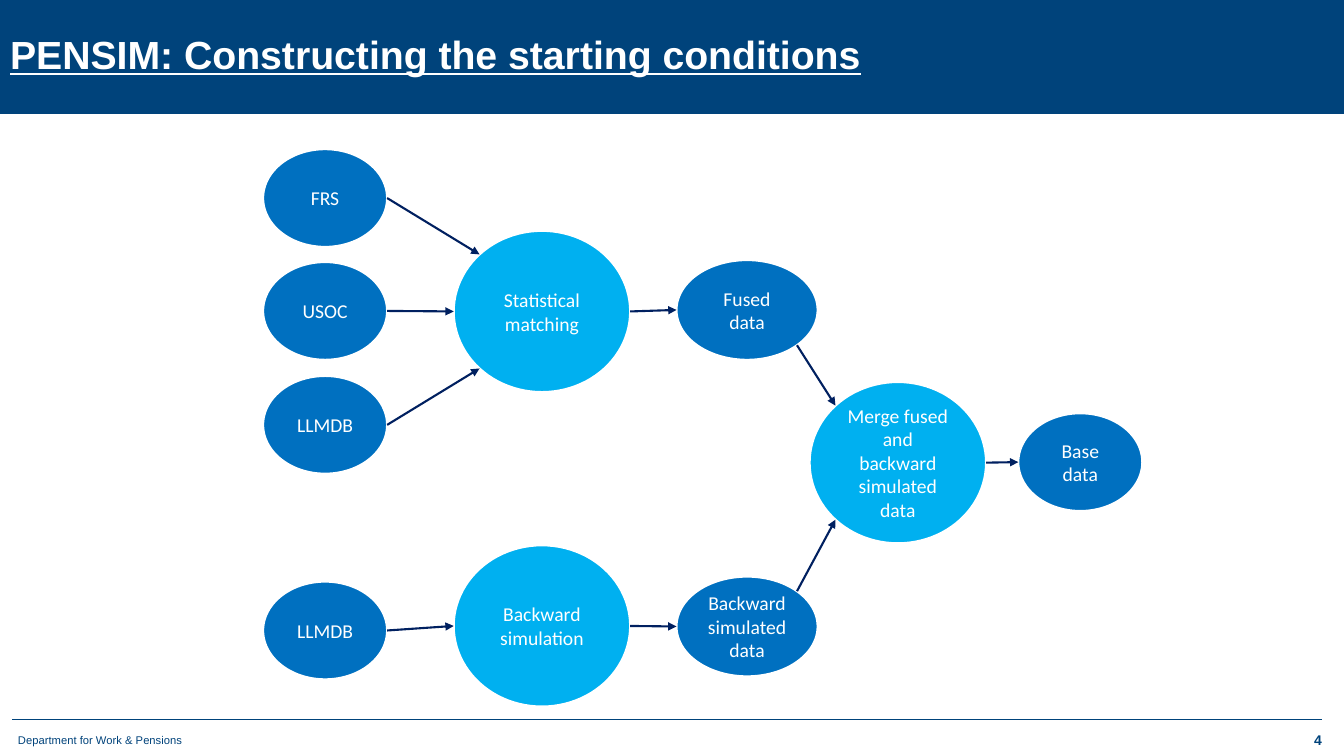
from math import cos, radians, sin

from lxml.etree import SubElement
from pptx import Presentation
from pptx.dml.color import RGBColor
from pptx.enum.shapes import MSO_CONNECTOR, MSO_SHAPE
from pptx.enum.text import MSO_ANCHOR, PP_ALIGN
from pptx.oxml.ns import qn
from pptx.util import Inches, Pt

COLORS = {
    "navy": "00437B",
    "data": "0070C0",
    "process": "00B0F0",
    "arrow": "002060",
    "white": "FFFFFF",
}
SMALL, MEDIUM, LARGE = (1.23, 0.97), (1.4, 0.99), (1.75, 1.6)
NODES = {
    "frs": ("FRS", "data", 2.61, 1.48, SMALL),
    "usoc": ("USOC", "data", 2.61, 2.6, SMALL),
    "llmdb": ("LLMDB", "data", 2.61, 3.73, SMALL),
    "matching": ("Statistical matching", "process", 4.5, 2.29, LARGE),
    "fused": ("Fused data", "data", 6.71, 2.58, MEDIUM),
    "merge": ("Merge fused and backward simulated data", "process", 8.03, 3.79, LARGE),
    "simulation": ("Backward simulation", "process", 4.5, 5.41, LARGE),
    "simulated": ("Backward simulated data", "data", 6.71, 5.72, MEDIUM),
    "base": ("Base data", "data", 10.1, 4.1, SMALL),
    "history": ("LLMDB", "data", 2.61, 5.77, SMALL),
}
RIGHT, LOWER_RIGHT, LOWER_LEFT, LEFT, UPPER_LEFT, UPPER_RIGHT = 0, 45, 135, 180, 225, 315
FLOWS = [
    ("frs", RIGHT, "matching", UPPER_LEFT),
    ("usoc", RIGHT, "matching", LEFT),
    ("llmdb", RIGHT, "matching", LOWER_LEFT),
    ("matching", RIGHT, "fused", LEFT),
    ("fused", LOWER_RIGHT, "merge", UPPER_LEFT),
    ("simulated", UPPER_RIGHT, "merge", LOWER_LEFT),
    ("simulation", RIGHT, "simulated", LEFT),
    ("history", RIGHT, "simulation", LEFT),
    ("merge", RIGHT, "base", LEFT),
]


def color(name):
    """Return the named colour."""
    return RGBColor.from_string(COLORS[name])


def write_text(shape, text, font_name, size, color_name, alignment, bold=False):
    """Put one formatted, vertically centred paragraph in a shape."""
    frame = shape.text_frame
    frame.text = text
    frame.word_wrap = True
    frame.vertical_anchor = MSO_ANCHOR.MIDDLE
    paragraph = frame.paragraphs[0]
    paragraph.alignment = alignment
    font = paragraph.runs[0].font
    font.name, font.size, font.bold = font_name, Pt(size), bold
    font.color.rgb = color(color_name)
    return paragraph


def place(shape, left, top, width, height):
    """Move a shape to a box given in inches."""
    shape.left, shape.top = Inches(left), Inches(top)
    shape.width, shape.height = Inches(width), Inches(height)


def add_title(slide, left, top, width, height):
    """Fill the title placeholder as a banner."""
    title = slide.shapes.title
    place(title, left, top, width, height)
    title.fill.solid()
    title.fill.fore_color.rgb = color("navy")
    paragraph = write_text(title, "PENSIM: Constructing the starting conditions",
                           "Arial", 28, "white", PP_ALIGN.LEFT, bold=True)
    paragraph.line_spacing = 0.9
    paragraph.runs[0].font.underline = True


def add_line(slide, start, end, color_name, width):
    """Draw a straight line without shadow between two points in inches."""
    line = slide.shapes.add_connector(
        MSO_CONNECTOR.STRAIGHT, *(Inches(value) for value in (*start, *end)))
    line.line.color.rgb = color(color_name)
    line.line.width = Pt(width)
    SubElement(line._element.spPr, qn("a:effectLst"))
    return line


def add_node(slide, text, color_name, left, top, size):
    """Draw one labelled ellipse of the flow diagram."""
    ellipse = slide.shapes.add_shape(
        MSO_SHAPE.OVAL, *(Inches(value) for value in (left, top, *size)))
    ellipse.shadow.inherit = False
    ellipse.fill.solid()
    ellipse.fill.fore_color.rgb = color(color_name)
    ellipse.line.color.rgb = color("white")
    ellipse.line.width = Pt(1.5)
    write_text(ellipse, text, "Calibri", 14, "white", PP_ALIGN.CENTER)


def rim_point(name, angle, left, top):
    """Return the point at a clockwise angle on the rim of a node."""
    _, _, node_left, node_top, (width, height) = NODES[name]
    return (left + node_left + width / 2 * (1 + cos(radians(angle))),
            top + node_top + height / 2 * (1 + sin(radians(angle))))


def add_diagram(slide, left, top):
    """Draw the nodes and the arrows that join them."""
    for text, color_name, node_left, node_top, size in NODES.values():
        add_node(slide, text, color_name, left + node_left, top + node_top, size)
    for source, source_angle, target, target_angle in FLOWS:
        arrow = add_line(slide, rim_point(source, source_angle, left, top),
                         rim_point(target, target_angle, left, top), "arrow", 1.5)
        SubElement(arrow.line._get_or_add_ln(), qn("a:tailEnd"), type="triangle")


def add_footer(slide, left, top, width):
    """Draw the footer rule, the department name and the page number."""
    right = left + width
    add_line(slide, (left, top), (right, top), "navy", 0.5)
    department = slide.shapes.add_textbox(0, 0, 0, 0)
    place(department, left - 0.04, top + 0.08, 3.39, 0.24)
    write_text(department, "Department for Work & Pensions",
               "Arial", 8, "navy", PP_ALIGN.LEFT)
    number = slide.shapes.add_textbox(0, 0, 0, 0)
    place(number, right - 2.9, top, 3, 0.4)
    write_text(number, "4", "Arial", 10, "navy", PP_ALIGN.RIGHT, bold=True)


def main():
    """Build and save the slide."""
    presentation = Presentation()
    presentation.slide_width = Inches(13.33)
    presentation.slide_height = Inches(7.5)
    slide = presentation.slides.add_slide(presentation.slide_layouts[5])
    add_title(slide, 0, 0, 13.33, 1.13)
    add_diagram(slide, 0, 0)
    add_footer(slide, 0.12, 7.14, 12.99)
    presentation.save("out.pptx")


if __name__ == "__main__":
    main()
